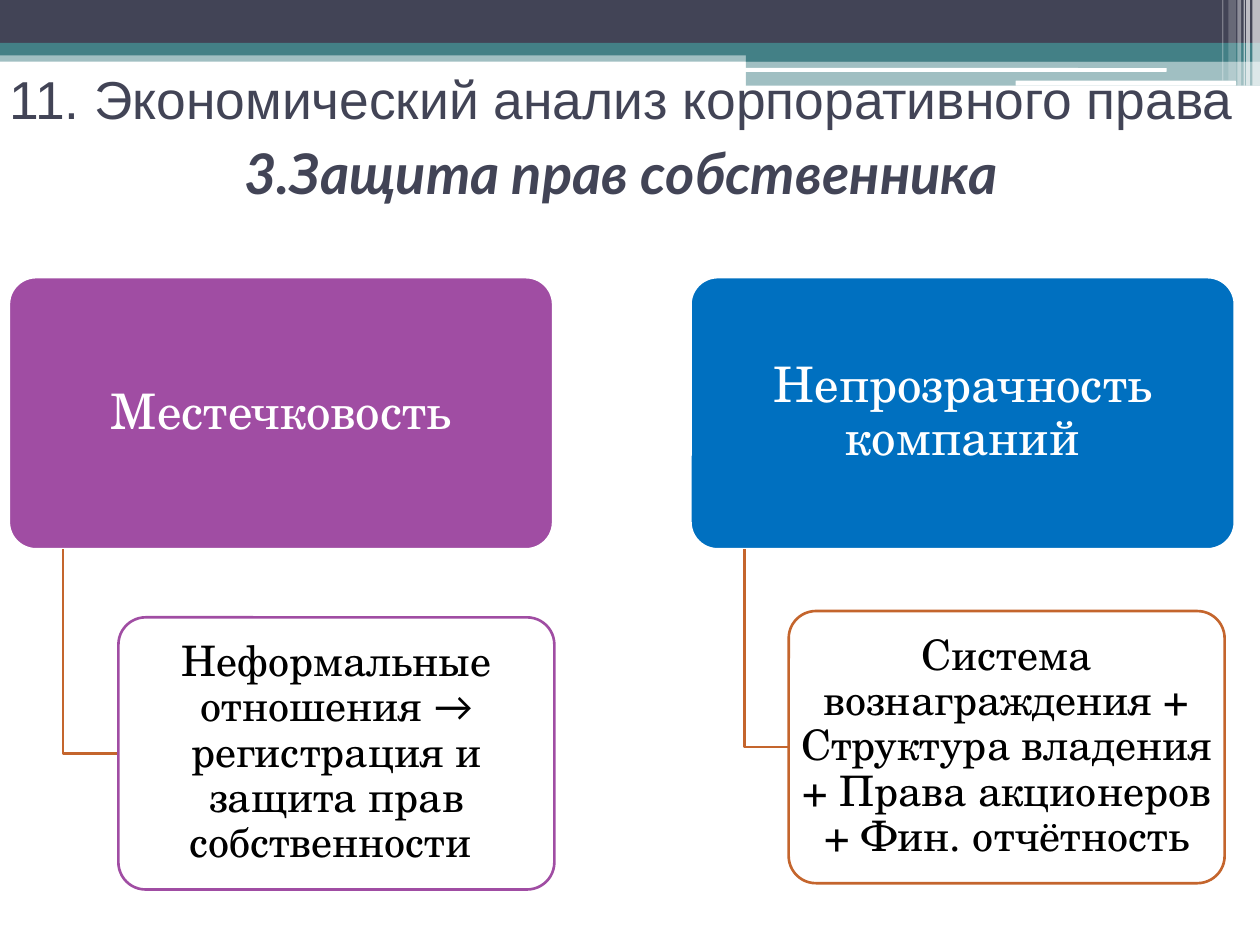
import pptx
import pptx.util
import pptx.dml.color
import pptx.enum.shapes
import pptx.enum.text
import pptx.oxml
import pptx.oxml.ns

Inches = pptx.util.Inches
Kind = pptx.enum.shapes.MSO_SHAPE

THEME = {
    "dark": "424456", "teal": "438086", "white": "FFFFFF", "black": "000000",
    "plum": "A04DA3", "blue": "0070C0", "rust": "C4652D",
    "serif": "TeX Gyre Schola", "sans": "Arial", "lato": "Lato", "arrow": "Calibri",
    "head": 30.5, "title": 32, "cause": 28, "effect": 24, "line": 1.5,
}

BANDS = [
    (0, 0.4, 10, 0.09, "teal", 50),
    (0, 0, 10, 0.34, "dark", 100),
    (0, 0.34, 10, 0.1, "teal", 100),
    (5.92, 0.39, 4.08, 0.1, "teal", 100),
    (5.92, 0.48, 4.08, 0.2, "teal", 50),
]
RULES = [(5.91, 0.54, 3.35, 0.03), (8.06, 0.64, 1.75, 0.04)]
STRIPES = [
    (9.94, 0.06, 0.68, 65), (9.89, 0.03, 0.68, 65), (9.87, 0.01, 0.68, 60),
    (9.82, 0.03, 0.68, 40), (9.75, 0.06, 0.64, 20), (9.7, 0.01, 0.64, 30),
]
TITLES = [
    ((0.28, 0.78, 9.3, 1.17), "3.Защита прав собственника", "title", "lato", True),
    ((-0.13, 0.12, 10.12, 1.31), "11. Экономический анализ корпоративного права",
     "head", "sans", False),
]
BRANCHES = [
    {"left": 0.07, "fill": "plum", "edge": "plum", "child": (0.94, 4.9),
     "cause": ["Местечковость"],
     "effect": ["Неформальные отношения ", "→",
                " регистрация и защита прав собственности "]},
    {"left": 5.48, "fill": "blue", "edge": "rust", "child": (6.26, 4.85),
     "cause": ["Непрозрачность компаний"],
     "effect": ["Система вознаграждения + Структура владения"
                " + Права акционеров + Фин. отчётность"]},
]
TOP, HIGH, WIDE, SLIM, STEM = 2.2, 2.16, 4.32, 3.46, 0.43


def color(name):
    return pptx.dml.color.RGBColor.from_string(THEME[name])


def stroke(shape, name):
    shape.line.color.rgb = color(name)
    shape.line.width = pptx.util.Pt(THEME["line"])


def block(slide, box, fill, alpha=100, edge=None, kind=Kind.RECTANGLE, adj=None):
    shape = slide.shapes.add_shape(kind, *map(Inches, box))
    shape.shadow.inherit = False
    shape.fill.solid()
    shape.fill.fore_color.rgb = color(fill)
    if alpha < 100:
        tint = shape.fill._xPr.find(".//" + pptx.oxml.ns.qn("a:srgbClr"))
        node = pptx.oxml.parse_xml(
            f'<a:alpha {pptx.oxml.ns.nsdecls("a")} val="{alpha * 1000}"/>')
        tint.append(node)
    if edge:
        stroke(shape, edge)
    else:
        shape.line.fill.background()
    if adj:
        shape.adjustments[0] = adj
    return shape


def write(shape, parts, size, face, ink):
    frame = shape.text_frame
    frame.word_wrap = True
    frame.vertical_anchor = pptx.enum.text.MSO_ANCHOR.MIDDLE
    para = frame.paragraphs[0]
    para.alignment = pptx.enum.text.PP_ALIGN.CENTER
    para.font.size = pptx.util.Pt(THEME[size])
    para.font.color.rgb = color(ink)
    if len(parts) == 1:
        para.font.name = THEME[face]
    for part in parts:
        run = para.add_run()
        run.text = part
        if len(parts) > 1:
            run.font.name = THEME["arrow" if part == "→" else face]
    return para


def card(slide, box, parts, size, ink, fill, alpha, edge):
    shape = block(slide, box, fill, alpha, edge, Kind.ROUNDED_RECTANGLE, 0.1)
    frame = shape.text_frame
    frame.margin_left = frame.margin_right = 0
    frame.margin_top = frame.margin_bottom = 0
    write(shape, parts, size, "serif", ink).line_spacing = 0.9


def elbow(slide, x, y, end, low):
    pen = slide.shapes.build_freeform(Inches(x), Inches(y))
    pen.add_line_segments(
        [(Inches(x), Inches(low)), (Inches(end), Inches(low))], close=False)
    shape = pen.convert_to_shape()
    shape.shadow.inherit = False
    shape.fill.background()
    stroke(shape, "rust")


def main():
    """Build the slide on protecting owners' rights."""
    deck = pptx.Presentation()
    deck.slide_width, deck.slide_height = Inches(10), Inches(7.5)
    slide = deck.slides.add_slide(deck.slide_layouts[6])

    for *box, fill, alpha in BANDS:
        block(slide, box, fill, alpha)
    for box in RULES:
        block(slide, box, "white", kind=Kind.ROUNDED_RECTANGLE)
    for left, wide, high, alpha in STRIPES:
        block(slide, (left, 0, wide, high), "white", alpha)

    for item in BRANCHES:
        left, (x, y) = item["left"], item["child"]
        card(slide, (left, TOP, WIDE, HIGH), item["cause"], "cause", "white",
             item["fill"], 100, "white")
        elbow(slide, left + STEM, TOP + HIGH, x, y + HIGH / 2)
        card(slide, (x, y, SLIM, HIGH), item["effect"], "effect", "black",
             "white", 90, item["edge"])

    for box, text, size, face, strong in TITLES:
        label = slide.shapes.add_textbox(*map(Inches, box))
        para = write(label, [text], size, face, "dark")
        para.font.bold = para.font.italic = strong

    deck.save("out.pptx")


if __name__ == "__main__":
    main()
